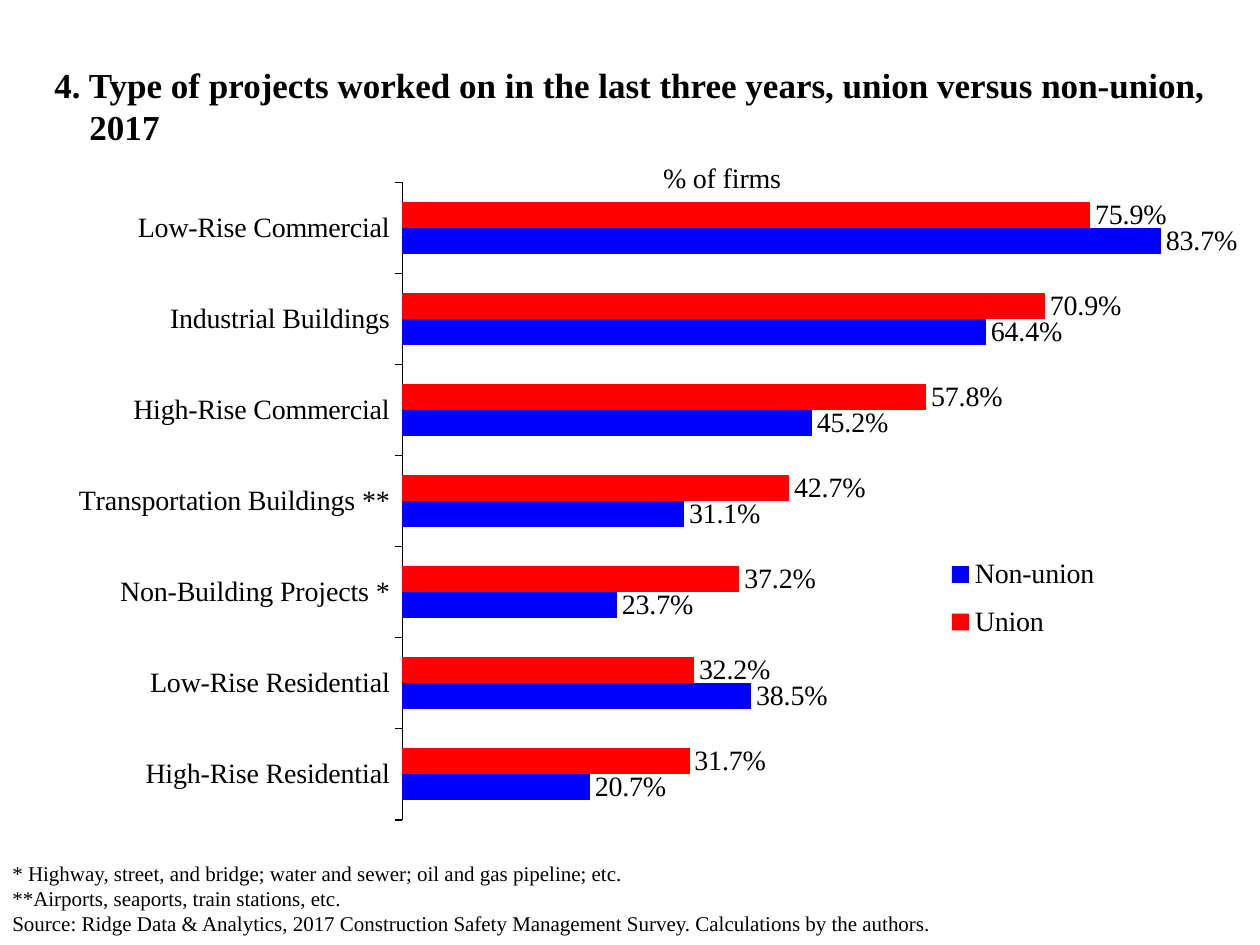
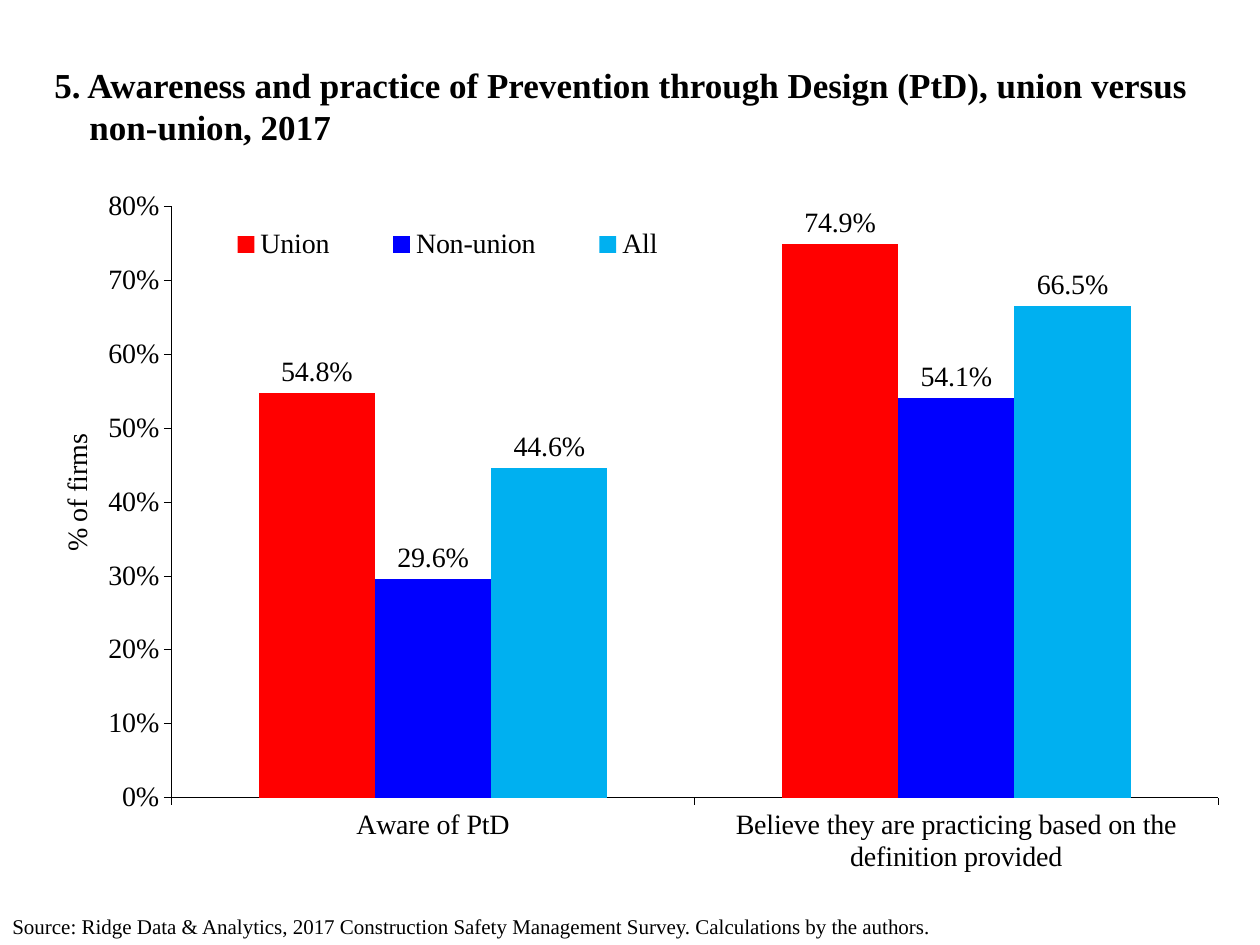
from pptx import Presentation
from pptx.chart.data import CategoryChartData
from pptx.dml.color import RGBColor
from pptx.enum.chart import XL_CHART_TYPE, XL_LABEL_POSITION, XL_LEGEND_POSITION, XL_TICK_MARK
from pptx.enum.text import MSO_ANCHOR, MSO_AUTO_SIZE
from pptx.oxml.xmlchemy import OxmlElement
from pptx.util import Pt

BARS = XL_CHART_TYPE.BAR_CLUSTERED
COLUMNS = XL_CHART_TYPE.COLUMN_CLUSTERED
OUTSIDE_END = XL_LABEL_POSITION.OUTSIDE_END
LEGEND_RIGHT, LEGEND_BOTTOM = XL_LEGEND_POSITION.RIGHT, XL_LEGEND_POSITION.BOTTOM
TICK_OUT, TICK_NONE = XL_TICK_MARK.OUTSIDE, XL_TICK_MARK.NONE
MIDDLE, TOP = MSO_ANCHOR.MIDDLE, MSO_ANCHOR.TOP
NO_FIT = MSO_AUTO_SIZE.NONE

FONT = "Times New Roman"
COLORS = {"text": "000000", "Union": "FF0000", "Non-union": "0000FF", "All": "00B0F0"}
TITLE_BOX = (24, 30, 672, 60)
TITLE_INDENT = 20
UNIT = "% of firms"
SOURCE = ("Source: Ridge Data & Analytics, 2017 Construction Safety Management Survey. "
          "Calculations by the authors.")


def color(name):
    return RGBColor.from_string(COLORS[name])


def style_font(font, size, bold=False):
    font.name, font.size, font.bold = FONT, Pt(size), bold
    font.color.rgb = color("text")


def add_text(page, box, lines, size, bold=False, anchor=TOP, indent=0):
    """Write one paragraph per line; lines after the first are indented."""
    frame = page.shapes.add_textbox(*map(Pt, box)).text_frame
    frame.word_wrap = True
    frame.auto_size = NO_FIT
    frame.vertical_anchor = anchor
    for number, line in enumerate(lines):
        para = frame.add_paragraph() if number else frame.paragraphs[0]
        if number and indent:
            para._p.get_or_add_pPr().set("marL", str(Pt(indent)))
        span = para.add_run()
        span.text = line
        style_font(span.font, size, bold)


def add_title(page, lines):
    add_text(page, TITLE_BOX, lines, 20, bold=True, anchor=MIDDLE, indent=TITLE_INDENT)


def add_footer(page, top, lines):
    add_text(page, (0, top, 720, 540 - top), lines, 12)


def place(chart, part, x, y, w=None, h=None):
    """Set the manual layout of a chart part, as fractions of the chart."""
    parent = chart.element.xpath(".//c:" + part)[0]
    for old in parent.xpath("c:layout"):
        parent.remove(old)
    layout, manual = OxmlElement("c:layout"), OxmlElement("c:manualLayout")
    layout.append(manual)
    settings = {"xMode": "edge", "yMode": "edge", "x": x, "y": y, "w": w, "h": h}
    if part == "plotArea":
        settings = {"layoutTarget": "inner", **settings}
    for tag, value in settings.items():
        if value is not None:
            item = OxmlElement("c:" + tag)
            item.set("val", str(value))
            manual.append(item)
    parent.insert(0 if part == "plotArea" else 1, layout)


def write_heading(heading):
    span = heading.text_frame.paragraphs[0].add_run()
    span.text = UNIT
    style_font(span.font, 16)


def style_axis(axis, line_width):
    axis.has_major_gridlines = False
    axis.major_tick_mark, axis.minor_tick_mark = TICK_OUT, TICK_NONE
    axis.format.line.color.rgb = color("text")
    axis.format.line.width = Pt(line_width)


def add_firm_chart(page, box, kind, categories, series, top_value, line_width,
                   plot_box, legend_box, legend_position):
    """Add a clustered chart of shares of firms, with labels and legend."""
    data = CategoryChartData(number_format="0.0%")
    data.categories = categories
    for name, values in series.items():
        data.add_series(name, values)
    chart = page.shapes.add_chart(kind, *map(Pt, box), data).chart
    style_font(chart.font, 16)
    chart.has_title = False

    # Bars and their labels
    plot = chart.plots[0]
    plot.gap_width, plot.overlap, plot.vary_by_categories = 150, 0, False
    for bars in plot.series:
        bars.format.fill.solid()
        bars.format.fill.fore_color.rgb = color(bars.name)
        labels = bars.data_labels
        labels.show_value = True
        labels.number_format, labels.number_format_is_linked = "0.0%", False
        labels.position = OUTSIDE_END
        style_font(labels.font, 16)

    # Axes
    for axis in (chart.category_axis, chart.value_axis):
        style_axis(axis, line_width)
    chart.value_axis.minimum_scale, chart.value_axis.maximum_scale = 0, top_value

    # Legend and plot area
    chart.has_legend = True
    chart.legend.position = legend_position
    chart.legend.include_in_layout = False
    style_font(chart.legend.font, 16)
    place(chart, "plotArea", *plot_box)
    place(chart, "legend", *legend_box)
    return chart


def build_projects_page(page):
    add_title(page, ["4. Type of projects worked on in the last three years, "
                     "union versus non-union,", "2017"])
    chart = add_firm_chart(
        page, (21, 84.5, 696, 396), BARS,
        ["Low-Rise Commercial", "Industrial Buildings", "High-Rise Commercial",
         "Transportation Buildings **", "Non-Building Projects *",
         "Low-Rise Residential", "High-Rise Residential"],
        {"Union": [0.759, 0.709, 0.578, 0.427, 0.372, 0.322, 0.317],
         "Non-union": [0.837, 0.644, 0.452, 0.311, 0.237, 0.385, 0.207]},
        0.9, 0.75, (0.3, 0.05, 0.67, 0.92), (0.73, 0.57, 0.16, 0.16), LEGEND_BOTTOM)
    chart.category_axis.reverse_order = True
    chart.value_axis.visible = False
    chart.has_title = True
    write_heading(chart.chart_title)
    place(chart, "title", 0.51, 0.01)
    add_footer(page, 488, [
        "* Highway, street, and bridge; water and sewer; oil and gas pipeline; etc.",
        "**Airports, seaports, train stations, etc.", SOURCE])


def build_awareness_page(page):
    add_title(page, ["5. Awareness and practice of Prevention through Design (PtD), "
                     "union versus", "non-union, 2017"])
    chart = add_firm_chart(
        page, (24, 106, 672, 397.5), COLUMNS,
        ["Aware of PtD", "Believe they are practicing based on the definition provided"],
        {"Union": [0.548, 0.749], "Non-union": [0.296, 0.541], "All": [0.446, 0.665]},
        0.8, 0.23, (0.11, 0.03, 0.89, 0.85), (0.12, 0.05, 0.45, 0.07), LEGEND_RIGHT)
    axis = chart.value_axis
    axis.major_unit = 0.1
    axis.tick_labels.number_format = "0%"
    axis.tick_labels.number_format_is_linked = False
    write_heading(axis.axis_title)
    place(chart, "title", 0.01, 0.35)
    add_footer(page, 518.4, [SOURCE])


def main():
    deck = Presentation()
    deck.slide_width, deck.slide_height = Pt(720), Pt(540)
    for build in (build_projects_page, build_awareness_page):
        build(deck.slides.add_slide(deck.slide_layouts[6]))
    deck.save("out.pptx")


if __name__ == "__main__":
    main()
